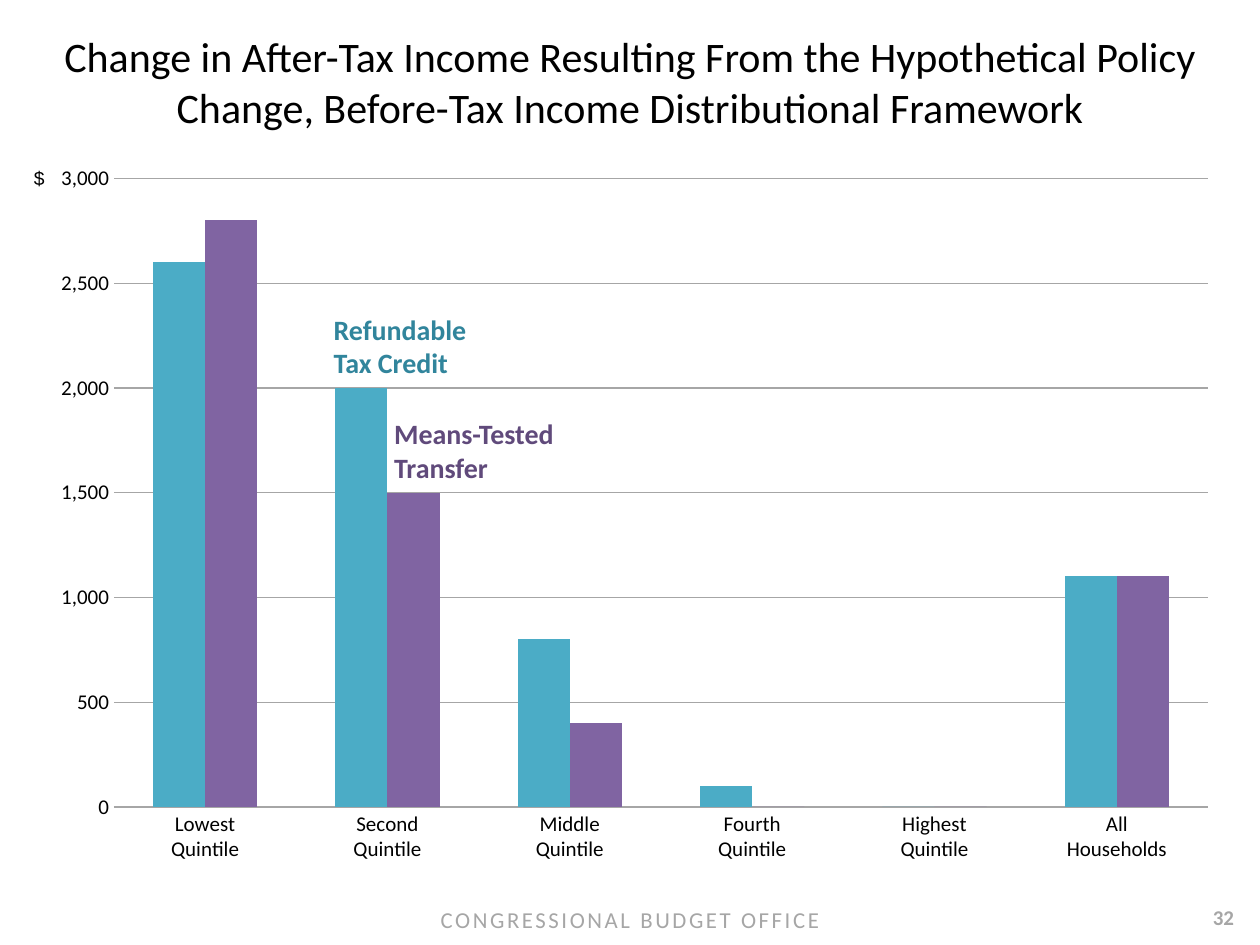
"""Build the slide on after-tax income change by quintile."""
from dataclasses import dataclass

from lxml import etree
from pptx import Presentation
from pptx.chart.data import CategoryChartData
from pptx.dml.color import RGBColor
from pptx.enum import chart as ch, text as tx
from pptx.oxml.ns import qn
from pptx.util import Inches, Pt

HUES = {
    "black": "000000", "grey": "A6A6A6", "teal": "4BACC6",
    "purple": "8064A2", "deep teal": "31859C", "deep purple": "604A7B",
}
CATS = [f"{rank}\nQuintile" for rank in
        ("Lowest", "Second", "Middle", "Fourth", "Highest")] + ["All\nHouseholds"]
PLOT = {"x": 0.068, "y": 0.06, "w": 0.916, "h": 0.84}
LEFT, MID = tx.PP_ALIGN.LEFT, tx.PP_ALIGN.CENTER


@dataclass
class Series:
    name: str
    vals: tuple
    hue: str


@dataclass
class Label:
    lines: tuple
    box: tuple
    size: float
    hue: str
    bold: bool = False
    font: str = "Calibri"
    align: tx.PP_ALIGN = LEFT
    wrap: bool = False
    space: int = 0


BARS = [
    Series("Series 1", (2600, 2000, 800, 100, 0, 1100), "teal"),
    Series("Series 2", (2800, 1500, 400, 0, 0, 1100), "purple"),
]
LABELS = [
    Label(("32",), (9.42, 7.13, 0.58, 0.31), 12, "grey", True, align=MID),
    Label(("CONGRESSIONAL BUDGET OFFICE",), (0, 7.08, 10, 0.38), 13, "grey",
          align=MID, wrap=True, space=150),
    Label(("Refundable", "Tax Credit"), (2.55, 2.43, 1.27, 0.64), 16,
          "deep teal", True),
    Label(("Means-Tested", "Transfer"), (3.03, 3.26, 1.5, 0.64), 16,
          "deep purple", True),
    Label(("$",), (0.17, 1.27, 0.29, 0.29), 11, "black", font="Arial"),
]
TITLE = Label(("Change in After-Tax Income Resulting From the Hypothetical Policy "
               "Change, Before-Tax Income Distributional Framework",),
              (0, 0.19, 10, 0.91), 24, "black", align=MID, wrap=True)


def tint(name: str) -> RGBColor:
    return RGBColor.from_string(HUES[name])


def style(font, size: float, hue: str, bold: bool = False,
          face: str = "Calibri") -> None:
    font.size, font.name, font.bold = Pt(size), face, bold
    font.color.rgb = tint(hue)


def write(shape, label: Label) -> None:
    frame = shape.text_frame
    frame.word_wrap = label.wrap
    frame.auto_size = tx.MSO_AUTO_SIZE.NONE
    for i, line in enumerate(label.lines):
        para = frame.add_paragraph() if i else frame.paragraphs[0]
        para.alignment = label.align
        run = para.add_run()
        run.text = line
        style(run.font, label.size, label.hue, label.bold, label.font)
        if label.space:
            run.font._element.set("spc", str(label.space))
            frame.vertical_anchor = tx.MSO_ANCHOR.MIDDLE
            frame.margin_top = Inches(0.1)


def rule(line) -> None:
    line.color.rgb = tint("grey")
    line.width = Pt(0.75)


def place(chart) -> None:
    area = chart._chartSpace.chart.plotArea
    for old in area.findall(qn("c:layout")):
        area.remove(old)
    outer = etree.Element(qn("c:layout"))
    area.insert(0, outer)
    inner = etree.SubElement(outer, qn("c:manualLayout"))
    parts = [("layoutTarget", "inner"), ("xMode", "edge"), ("yMode", "edge")]
    for tag, val in parts + list(PLOT.items()):
        etree.SubElement(inner, qn(f"c:{tag}")).set("val", str(val))


def plot(slide) -> None:
    data = CategoryChartData(number_format="#,##0")
    data.categories = CATS
    for bar in BARS:
        data.add_series(bar.name, bar.vals)
    box = [Inches(n) for n in (0.26, 1.06, 9.48, 5.94)]
    chart = slide.shapes.add_chart(
        ch.XL_CHART_TYPE.COLUMN_CLUSTERED, *box, data).chart
    chart.has_legend = chart.has_title = False
    style(chart.font, 10, "black")
    place(chart)
    bars = chart.plots[0]
    bars.gap_width, bars.overlap, bars.vary_by_categories = 150, 0, False
    for series, bar in zip(bars.series, BARS):
        series.format.fill.solid()
        series.format.fill.fore_color.rgb = tint(bar.hue)
    cat, val = chart.category_axis, chart.value_axis
    for axis in (cat, val):
        axis.major_tick_mark = axis.minor_tick_mark = ch.XL_TICK_MARK.NONE
        style(axis.tick_labels.font, 12, "black")
    rule(cat.format.line)
    val.minimum_scale, val.maximum_scale, val.major_unit = 0, 3000, 500
    val.tick_labels.number_format = "#,##0"
    val.tick_labels.number_format_is_linked = False
    val.format.line.fill.background()
    val.has_major_gridlines = True
    rule(val.major_gridlines.format.line)


def main() -> None:
    deck = Presentation()
    deck.slide_width, deck.slide_height = Inches(10), Inches(7.5)
    slide = deck.slides.add_slide(deck.slide_layouts[5])
    plot(slide)
    for label in LABELS:
        box = [Inches(n) for n in label.box]
        write(slide.shapes.add_textbox(*box), label)
    head = slide.shapes.title
    head.left, head.top, head.width, head.height = map(Inches, TITLE.box)
    write(head, TITLE)
    deck.save("out.pptx")


if __name__ == "__main__":
    main()
